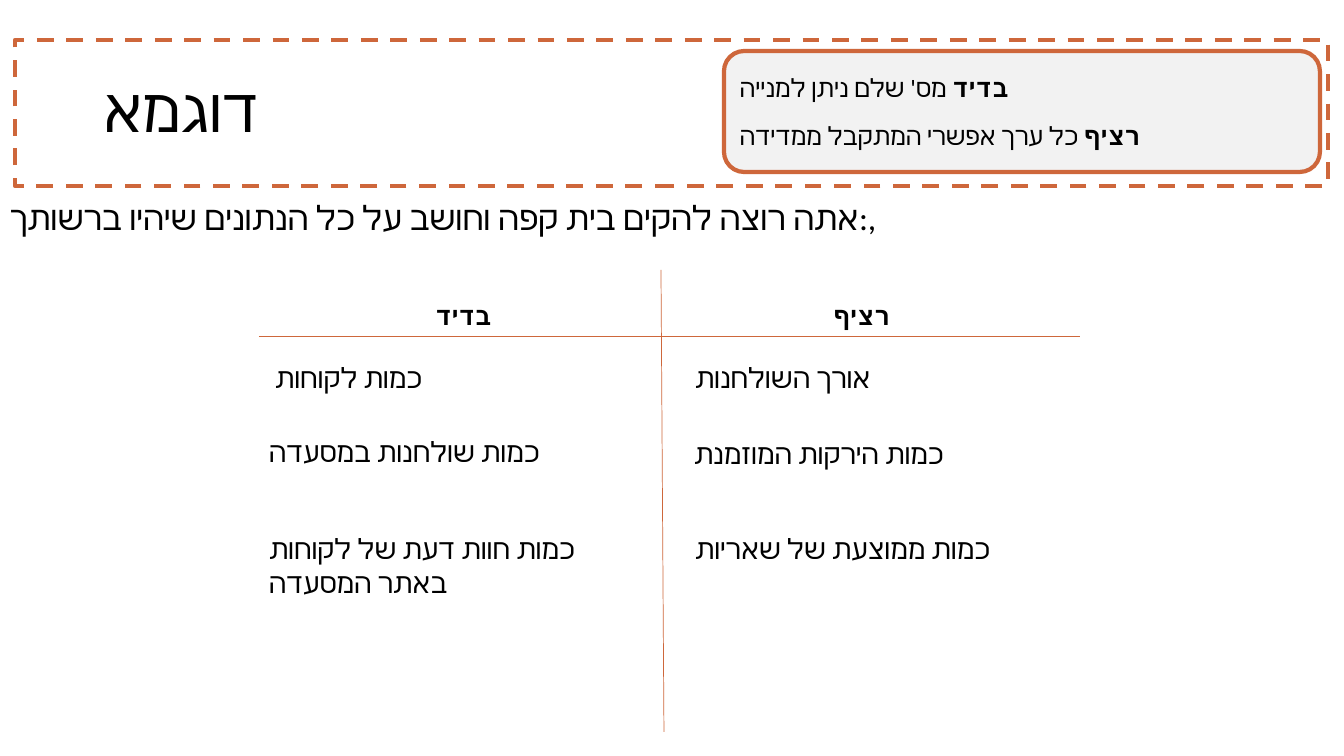
from lxml.etree import SubElement
from pptx import Presentation
from pptx.dml.color import RGBColor
from pptx.enum.dml import MSO_LINE
from pptx.enum.shapes import MSO_CONNECTOR, MSO_SHAPE
from pptx.enum.text import MSO_ANCHOR, MSO_AUTO_SIZE, PP_ALIGN
from pptx.oxml.ns import qn
from pptx.util import Emu, Pt

# Content
TITLE = "דוגמא"
QUESTION = "אתה רוצה להקים בית קפה וחושב על כל הנתונים שיהיו ברשותך:,"
DEFINITIONS = [
    ("בדיד ", "מס' שלם ניתן למנייה"),
    ("רציף ", "כל ערך אפשרי המתקבל ממדידה"),
]
HEADINGS = [("בדיד", 263), ("רציף", 661)]
EXAMPLES = [  # text, left, top, width
    ("כמות לקוחות", 265, 356, 375),
    ("כמות שולחנות במסעדה", 259, 430, 399),
    ("כמות חוות דעת של לקוחות באתר המסעדה", 259, 527, 384),
    ("אורך השולחנות", 685, 356, 402),
    ("כמות הירקות המוזמנת", 684, 432, 405),
    ("כמות ממוצעת של שאריות", 685, 527, 380),
]
DIVIDERS = [(661, 270, 664, 732), (259, 336, 1080, 336)]

FONT = "Calibri"
BLACK, ORANGE, GREY = "000000", "CE673B", "F2F2F2"
EMU_PER_PX = 914400 / 100.8


def px(*lengths):
    return [Emu(round(length * EMU_PER_PX)) for length in lengths]


def color(value):
    return RGBColor.from_string(value)


def format_run(run, size, bold=False):
    run.font.size = Pt(size)
    run.font.bold = bold
    run.font.name = FONT
    run.font.color.rgb = color(BLACK)
    # Hebrew letters take the complex-script font
    SubElement(run.font._element, qn("a:cs")).set("typeface", FONT)


def set_line(line, width):
    line.color.rgb = color(ORANGE)
    line.width = Pt(width)


def add_text(slide, text, box, size, bold=False, align=PP_ALIGN.LEFT):
    text_frame = slide.shapes.add_textbox(*px(*box)).text_frame
    text_frame.word_wrap = True
    text_frame.text = text
    paragraph = text_frame.paragraphs[0]
    paragraph.alignment = align
    format_run(paragraph.runs[0], size, bold)


def add_box(slide, kind, box, fill=None):
    shape = slide.shapes.add_shape(kind, *px(*box))
    shape.shadow.inherit = False
    if fill:
        shape.fill.solid()
        shape.fill.fore_color.rgb = color(fill)
    else:
        shape.fill.background()
    set_line(shape.line, 3)
    return shape


def main():
    presentation = Presentation()
    presentation.slide_width, presentation.slide_height = px(1344, 756)
    slide = presentation.slides.add_slide(presentation.slide_layouts[5])

    # Dashed frame and title
    header = (15, 40, 1313, 146)
    frame = add_box(slide, MSO_SHAPE.RECTANGLE, header)
    frame.line.dash_style = MSO_LINE.DASH

    title = slide.shapes.title
    title.left, title.top, title.width, title.height = px(93, 40, 1159, 146)
    title.text_frame.text = TITLE
    title.text_frame.auto_size = MSO_AUTO_SIZE.NONE
    title.text_frame.vertical_anchor = MSO_ANCHOR.MIDDLE
    paragraph = title.text_frame.paragraphs[0]
    paragraph.alignment = PP_ALIGN.LEFT
    paragraph.line_spacing = 0.9
    format_run(paragraph.runs[0], 44)

    # Question and two columns of examples
    add_text(slide, QUESTION, (0, 192, 1301, 50), 24)
    for heading, left in HEADINGS:
        add_text(slide, heading, (left, 295, 401, 40), 18, True, PP_ALIGN.CENTER)
    for x1, y1, x2, y2 in DIVIDERS:
        divider = slide.shapes.add_connector(MSO_CONNECTOR.STRAIGHT, *px(x1, y1, x2, y2))
        set_line(divider.line, 0.5)
        SubElement(divider._element.spPr, qn("a:effectLst"))
    for text, left, top, width in EXAMPLES:
        add_text(slide, text, (left, top, width, 44), 20)

    # Definitions callout
    callout = add_box(slide, MSO_SHAPE.ROUNDED_RECTANGLE, (724, 51, 596, 121), GREY)
    text_frame = callout.text_frame
    text_frame.word_wrap = True
    text_frame.vertical_anchor = MSO_ANCHOR.MIDDLE
    for index, (term, meaning) in enumerate(DEFINITIONS):
        paragraph = text_frame.add_paragraph() if index else text_frame.paragraphs[0]
        paragraph.alignment = PP_ALIGN.LEFT
        if index:
            paragraph.space_before = Pt(13)
        for text, bold in ((term, True), (meaning, False)):
            run = paragraph.add_run()
            run.text = text
            format_run(run, 18, bold)

    presentation.save("out.pptx")


if __name__ == "__main__":
    main()
